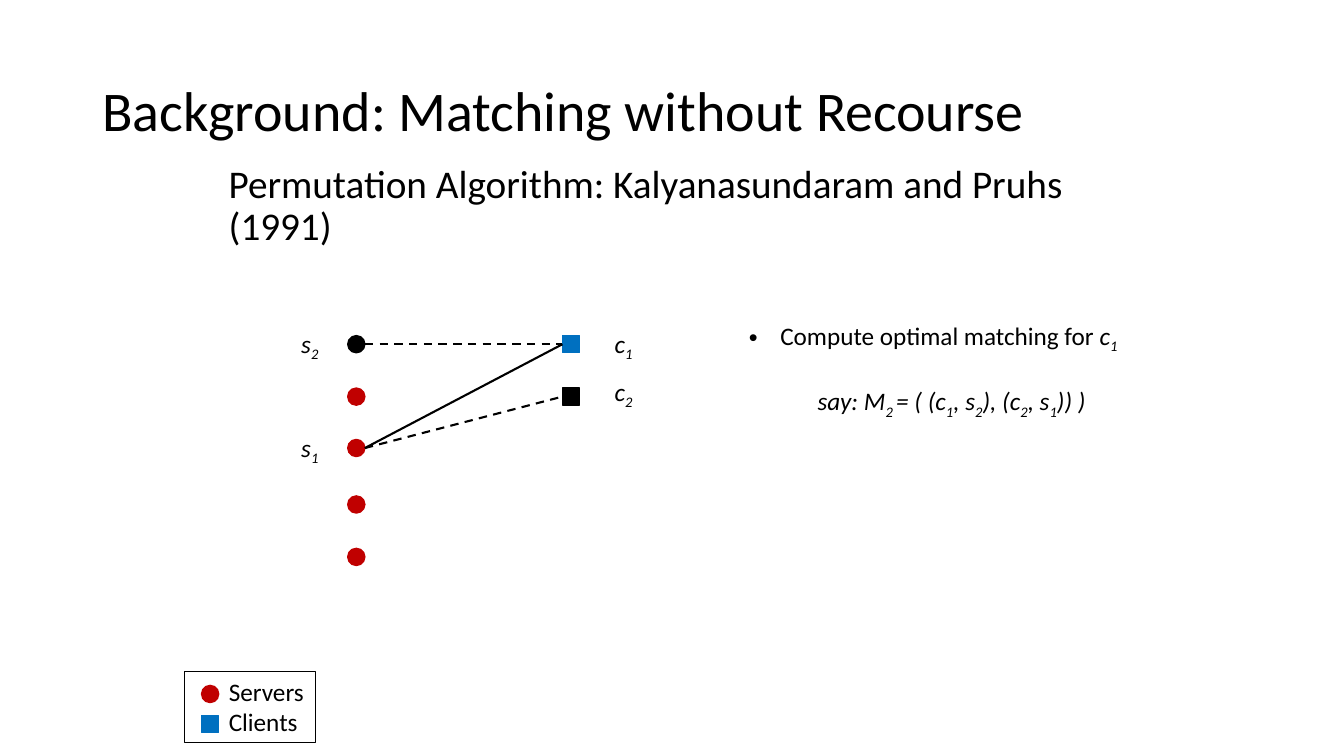
from pptx import Presentation
from pptx.dml.color import RGBColor
from pptx.enum.dml import MSO_LINE
from pptx.enum.shapes import MSO_CONNECTOR, MSO_SHAPE
from pptx.enum.text import MSO_ANCHOR, PP_ALIGN
from pptx.util import Pt
from lxml.etree import SubElement
from pptx.oxml.ns import qn

BLACK = RGBColor(0, 0, 0)
RED = RGBColor(0xC0, 0, 0)
BLUE = RGBColor(0, 0x70, 0xC0)
FONT = "Calibri"

TITLE = "Background: Matching without Recourse"
TOPIC = "Permutation Algorithm: Kalyanasundaram and Pruhs (1991)"
# Every second piece between bars is a subscript.
STEP = "Compute optimal matching for "
GOAL = "c|1"
MATCH = "say: M|2 |= ( (c|1|, s|2|), (c|2|, s|1|)) )"
LEGEND = ["Servers", "Clients"]

SIZE = 12.24
SERVER_X, CLIENT_X = 248.4, 401.76
SERVERS = [(239.76, BLACK), (277.2, RED), (313.92, RED), (354.24, RED), (391.68, RED)]
CLIENTS = [(239.76, BLUE), (277.2, BLACK)]
# server index, client index, dashed
EDGES = [(2, 0, False), (2, 1, True), (0, 0, True)]
LABELS = [("s|2", 208.08, 231.12), ("s|1", 208.08, 305.28),
          ("c|1", 432, 231.12), ("c|2", 432, 264.96)]

deck = Presentation()
deck.slide_width, deck.slide_height = Pt(960), Pt(540)
slide = deck.slides.add_slide(deck.slide_layouts[6])
shapes = slide.shapes


def style(para, size=18, italic=None):
    font = para.font
    font.name, font.size, font.italic = FONT, Pt(size), italic
    font.color.rgb = BLACK


def add_math(para, text):
    """Add runs split at bars, with every second one as a subscript."""
    for i, part in enumerate(text.split("|")):
        run = para.add_run()
        run.text = part
        if i % 2:
            run.font._element.set("baseline", "-25000")


def add_box(x, y, w, h, wrap=True):
    frame = shapes.add_textbox(Pt(x), Pt(y), Pt(w), Pt(h)).text_frame
    frame.word_wrap = wrap
    return frame


def add_mark(kind, x, y, color):
    mark = shapes.add_shape(kind, Pt(x), Pt(y), Pt(SIZE), Pt(SIZE))
    mark.shadow.inherit = False
    mark.fill.solid()
    mark.fill.fore_color.rgb = mark.line.color.rgb = color
    mark.line.width = Pt(1)
    return mark


def add_head(text, x, y, w, h, size):
    frame = add_box(x, y, w, h)
    para = frame.paragraphs[0]
    para.text, para.line_spacing = text, 0.9
    style(para, size)
    return frame


def add_edge(server, client, dashed):
    start = server.left + server.width, server.top + server.height // 2
    edge = shapes.add_connector(MSO_CONNECTOR.STRAIGHT, *start, *start)
    edge.end_connect(client, 1)
    edge.line.color.rgb, edge.line.width = BLACK, Pt(1.5)
    if dashed:
        edge.line.dash_style = MSO_LINE.DASH
    SubElement(edge._element.spPr, qn("a:effectLst"))


def add_legend():
    box = shapes.add_shape(MSO_SHAPE.RECTANGLE, Pt(131.76), Pt(479.52), Pt(93.6), Pt(51.12))
    box.shadow.inherit = False
    box.fill.background()
    box.line.color.rgb, box.line.width = BLACK, Pt(0.75)
    frame = box.text_frame
    frame.margin_left, frame.margin_right = Pt(31.7), Pt(0)
    frame.vertical_anchor = MSO_ANCHOR.TOP
    frame.text = "\n".join(LEGEND)
    for para in frame.paragraphs:
        para.alignment = PP_ALIGN.LEFT
        style(para)
    add_mark(MSO_SHAPE.OVAL, 144, 489.6, RED)
    add_mark(MSO_SHAPE.RECTANGLE, 144, 511.2, BLUE)


def add_steps():
    frame = add_box(527.76, 225.36, 303.84, 116.64)
    step, match = frame.paragraphs[0], frame.add_paragraph()
    style(step)
    step.add_run().text = STEP
    add_math(step, GOAL)
    for run in step.runs[1:]:
        run.font.italic = True
    props = step._p.get_or_add_pPr()
    props.set("marL", str(Pt(22.5)))
    props.set("indent", str(Pt(-22.5)))
    # The bullet goes ahead of the default run properties.
    bullet = SubElement(props, qn("a:buChar"), char="•")
    props.insert(0, bullet)
    face = SubElement(props, qn("a:buFont"), typeface="Arial")
    props.insert(0, face)
    style(match, italic=True)
    match.alignment, match.space_before = PP_ALIGN.CENTER, Pt(22)
    add_math(match, MATCH)


add_head(TITLE, 66, 28.8, 828, 104.4, 40).vertical_anchor = MSO_ANCHOR.MIDDLE
add_head(TOPIC, 156.24, 113.76, 648, 414, 28)
servers = [add_mark(MSO_SHAPE.OVAL, SERVER_X, y, color) for y, color in SERVERS]
clients = [add_mark(MSO_SHAPE.RECTANGLE, CLIENT_X, y, color) for y, color in CLIENTS]
for s, c, dashed in EDGES:
    add_edge(servers[s], clients[c], dashed)
for text, x, y in LABELS:
    para = add_box(x, y, 28.08, 28.8, wrap=False).paragraphs[0]
    style(para, italic=True)
    add_math(para, text)
add_legend()
add_steps()
deck.save("out.pptx")
